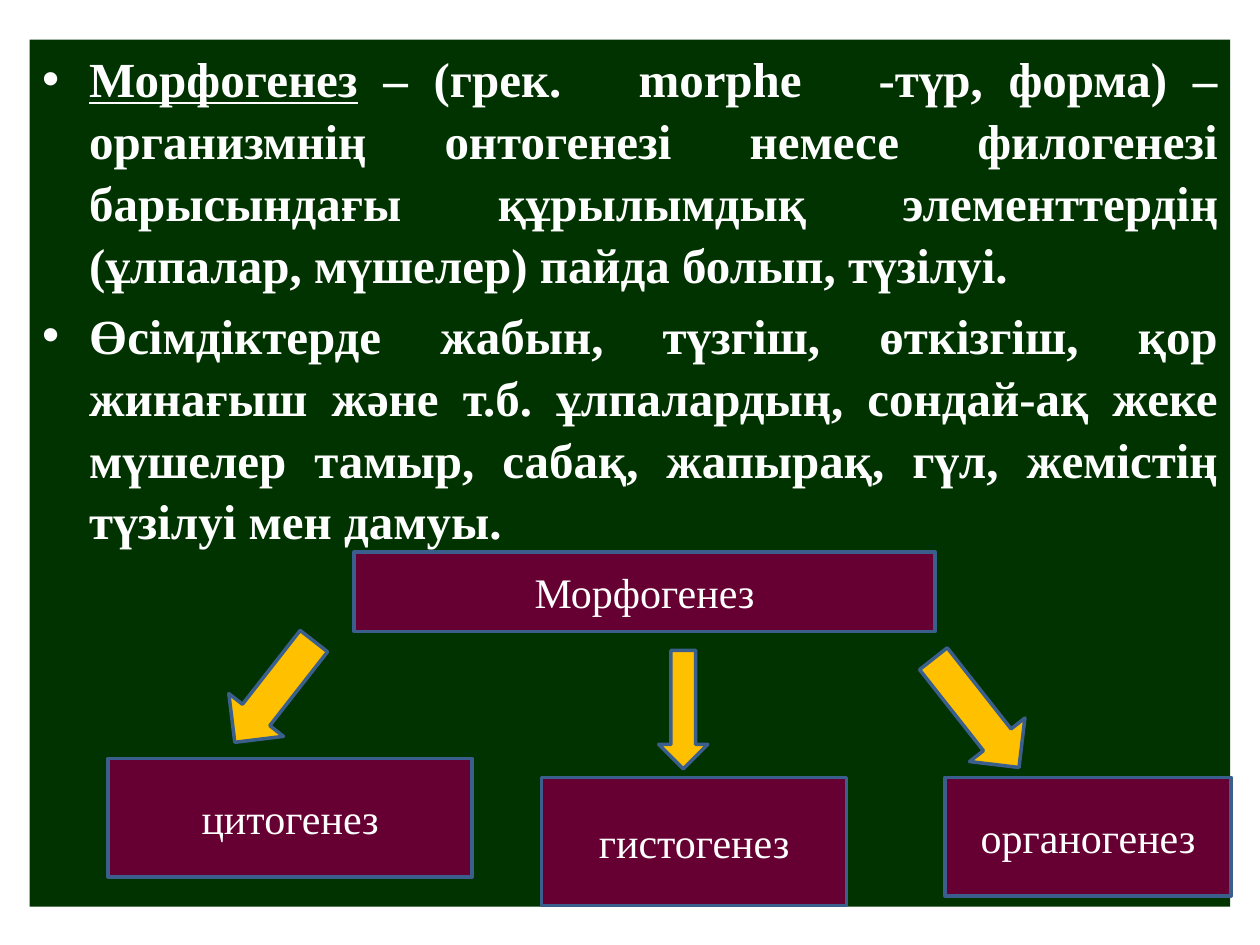
import pptx
import pptx.util
import pptx.dml.color
import pptx.enum.shapes
import pptx.enum.text
import pptx.oxml
import pptx.oxml.ns

Cm = pptx.util.Cm
Pt = pptx.util.Pt
RGBColor = pptx.dml.color.RGBColor
SHAPE = pptx.enum.shapes.MSO_SHAPE
ALIGN = pptx.enum.text.PP_ALIGN
ANCHOR = pptx.enum.text.MSO_ANCHOR

GREEN = RGBColor(0x00, 0x33, 0x00)
MAROON = RGBColor(0x66, 0x00, 0x33)
AMBER = RGBColor(0xFF, 0xC0, 0x00)
BLUE = RGBColor(0x3A, 0x5F, 0x8C)
WHITE = RGBColor(0xFF, 0xFF, 0xFF)
FONT = "Times New Roman"

DEFINITIONS = [
    [("Морфогенез", True),
     (" – (грек.   morphe   -түр, форма) –организмнің онтогенезі немесе филогенезі "
      "барысындағы құрылымдық элементтердің (ұлпалар, мүшелер) пайда болып, түзілуі.", False)],
    [("Өсімдіктерде жабын, түзгіш, өткізгіш, қор жинағыш және т.б. ұлпалардың, "
      "сондай-ақ жеке мүшелер тамыр, сабақ, жапырақ, гүл, жемістің түзілуі мен дамуы.", False)],
]
STAGES = [
    ("Морфогенез", 6.54, 10.33, 11.71, 1.6),
    ("цитогенез", 1.58, 14.49, 7.34, 2.39),
    ("гистогенез", 10.32, 14.87, 6.15, 2.59),
    ("органогенез", 18.45, 14.87, 5.77, 2.39),
]
ARROWS = [
    (4.23, 11.85, 1.4, 2.59, 38),
    (12.68, 12.31, 0.99, 2.39, 0),
    (18.37, 12.18, 1.42, 2.79, 321.8),
]


def add_filled(slide, kind, box, fill, outlined=True):
    shape = slide.shapes.add_shape(kind, *(Cm(length) for length in box))
    shape.shadow.inherit = False
    shape.fill.solid()
    shape.fill.fore_color.rgb = fill
    if outlined:
        shape.line.color.rgb = BLUE
        shape.line.width = Pt(2)
    else:
        shape.line.fill.background()
    return shape


def add_run(paragraph, text, size, bold=False, underline=False):
    run = paragraph.add_run()
    run.text = text
    run.font.name = FONT
    run.font.size = Pt(size)
    run.font.bold = bold
    run.font.underline = underline
    run.font.color.rgb = WHITE


def add_bullet(paragraph):
    properties = paragraph._p.get_or_add_pPr()
    properties.set("marL", str(Cm(0.95)))
    properties.set("indent", str(-Cm(0.95)))
    for tag, attribute, setting in (("a:buFont", "typeface", "Arial"), ("a:buChar", "char", "•")):
        bullet = pptx.oxml.parse_xml(f"<{tag} {pptx.oxml.ns.nsdecls('a')}/>")
        bullet.set(attribute, setting)
        properties.append(bullet)


def build_definitions(slide, box):
    panel = add_filled(slide, SHAPE.RECTANGLE, box, GREEN, outlined=False)
    frame = panel.text_frame
    frame.word_wrap = True
    frame.vertical_anchor = ANCHOR.TOP
    for index, definition in enumerate(DEFINITIONS):
        paragraph = frame.add_paragraph() if index else frame.paragraphs[0]
        add_bullet(paragraph)
        paragraph.alignment = ALIGN.JUSTIFY
        paragraph.line_spacing = 1.05
        if index:
            paragraph.space_before = Pt(5.6)
        for text, underline in definition:
            add_run(paragraph, text, 28, bold=True, underline=underline)


def build_diagram(slide, box):
    left, top = box[:2]
    for label, x, y, width, height in STAGES:
        stage = add_filled(slide, SHAPE.RECTANGLE, (left + x, top + y, width, height), MAROON)
        stage.text_frame.word_wrap = True
        stage.text_frame.vertical_anchor = ANCHOR.MIDDLE
        paragraph = stage.text_frame.paragraphs[0]
        paragraph.alignment = ALIGN.CENTER
        add_run(paragraph, label, 24)
    for x, y, width, height, angle in ARROWS:
        arrow = add_filled(slide, SHAPE.DOWN_ARROW, (left + x, top + y, width, height), AMBER)
        arrow.rotation = angle


def main():
    presentation = pptx.Presentation()
    presentation.slide_width = Cm(25.4)
    presentation.slide_height = Cm(19.05)
    slide = presentation.slides.add_slide(presentation.slide_layouts[6])
    content = (0.6, 0.8, 24.2, 17.48)
    build_definitions(slide, content)
    build_diagram(slide, content)
    presentation.save("out.pptx")


if __name__ == "__main__":
    main()
